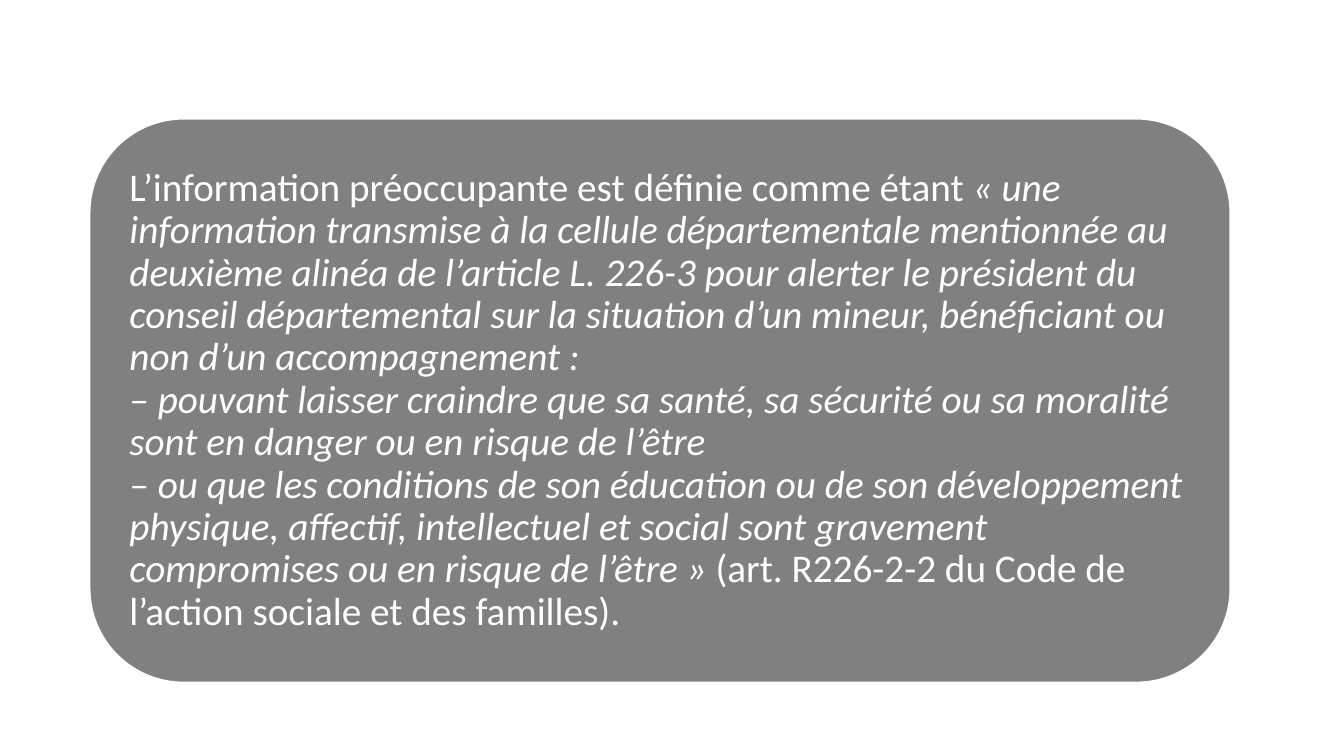
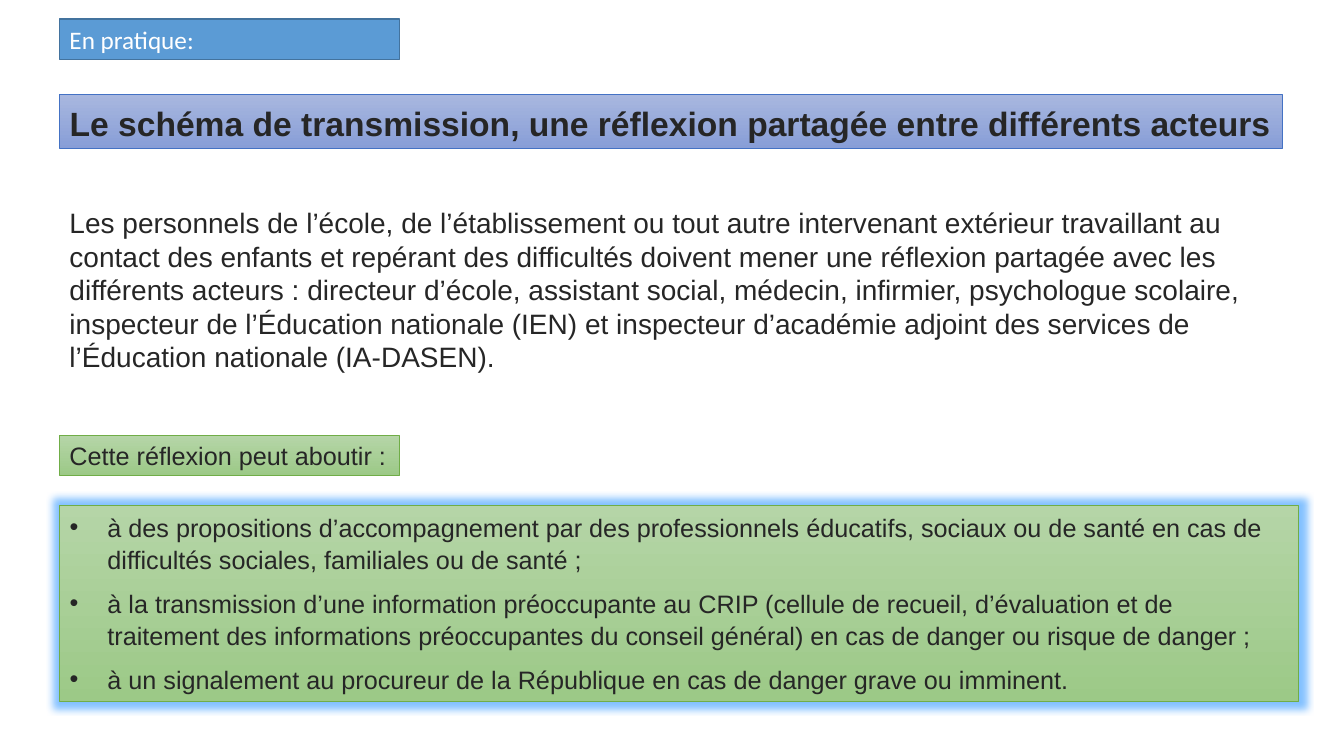
from dataclasses import dataclass
from typing import Optional

import lxml.etree
import pptx
import pptx.dml.color
import pptx.enum.shapes
import pptx.enum.text
import pptx.oxml.ns
import pptx.util

MSO_SHAPE = pptx.enum.shapes.MSO_SHAPE
ANCHOR = pptx.enum.text.MSO_ANCHOR
ALIGN = pptx.enum.text.PP_ALIGN


@dataclass(frozen=True)
class Theme:
    width: float = 13.33
    height: float = 7.5
    columns: int = 100
    rows: int = 100
    sans: str = "Arial"
    label: str = "Calibri"
    ink: str = "262626"
    white: str = "FFFFFF"
    grey: str = "808080"
    glow: str = "3399FF"
    quote_size: int = 28
    title_size: int = 24
    body_size: int = 20
    small_size: int = 18
    left: float = 4.43
    wide: float = 91
    narrow: float = 25.28


@dataclass(frozen=True)
class Skin:
    colors: tuple[str, ...]
    line: str
    weight: float = 0.5


@dataclass(frozen=True)
class Box:
    col: float
    row: float
    cols: float
    rows: float

    def place(self, sp) -> None:
        sp.left, sp.top, sp.width, sp.height = self.emu()

    def emu(self) -> tuple[int, ...]:
        x, y = T.width / T.columns, T.height / T.rows
        return tuple(pptx.util.Inches(v) for v in
                     (self.col * x, self.row * y, self.cols * x, self.rows * y))


T = Theme()
QUOTE_SKIN = Skin((T.grey,), T.white, 1)
LABEL_SKIN = Skin(("5B9BD5",), "43739E", 1)
TITLE_SKIN = Skin(("A8B7DF", "889ED7"), "4472C4")
GREEN_SKIN = Skin(("B5D5A7", "9CC987"), "70AD47")

QUOTE = (
    ("L’information préoccupante est définie comme étant ", False),
    ("« une information transmise à la cellule départementale mentionnée au "
     "deuxième alinéa de l’article L. 226-3 pour alerter le président du conseil "
     "départemental sur la situation d’un mineur, bénéficiant ou non d’un "
     "accompagnement :\n– pouvant laisser craindre que sa santé, sa sécurité ou sa "
     "moralité sont en danger ou en risque de l’être\n– ou que les conditions de son "
     "éducation ou de son développement physique, affectif, intellectuel et social "
     "sont gravement compromises ou en risque de l’être »", True),
    (" (art. R226-2-2 du Code de l’action sociale et des familles).", False),
)
TITLE = "Le schéma de transmission, une réflexion partagée entre différents acteurs"
INTRO = (
    "Les personnels de l’école, de l’établissement ou tout autre intervenant extérieur "
    "travaillant au contact des enfants et repérant des difficultés doivent mener une "
    "réflexion partagée avec les différents acteurs : directeur d’école, assistant "
    "social, médecin, infirmier, psychologue scolaire, inspecteur de l’Éducation "
    "nationale (IEN) et inspecteur d’académie adjoint des services de l’Éducation "
    "nationale (IA-DASEN)."
)
OUTCOMES = (
    "à des propositions d’accompagnement par des professionnels éducatifs, sociaux ou "
    "de santé en cas de difficultés sociales, familiales ou de santé ;",
    "à la transmission d’une information préoccupante au CRIP (cellule de recueil, "
    "d’évaluation et de traitement des informations préoccupantes du conseil général) "
    "en cas de danger ou risque de danger ;",
    "à un signalement au procureur de la République en cas de danger grave ou imminent.",
)


def rgb(value: str) -> pptx.dml.color.RGBColor:
    return pptx.dml.color.RGBColor.from_string(value)


def paint(sp, skin: Skin) -> None:
    if len(skin.colors) == 1:
        sp.fill.solid()
        sp.fill.fore_color.rgb = rgb(skin.colors[0])
    else:
        sp.fill.gradient()
        sp.fill.gradient_angle = 270
        for stop, color in zip(sp.fill.gradient_stops, skin.colors):
            stop.color.rgb = rgb(color)
    sp.line.color.rgb = rgb(skin.line)
    sp.line.width = pptx.util.Pt(skin.weight)
    sp.shadow.inherit = False


def add_glow(sp, color: str, radius: float, alpha: int) -> None:
    qn = pptx.oxml.ns.qn
    effects = sp.element.spPr.find(qn("a:effectLst"))
    glow = lxml.etree.SubElement(effects, qn("a:glow"), rad=str(pptx.util.Inches(radius)))
    clr = lxml.etree.SubElement(glow, qn("a:srgbClr"), val=color)
    lxml.etree.SubElement(clr, qn("a:alpha"), val=str(alpha * 1000))


def write(p, text: str, *, size: int, font: str = T.sans, color: str = T.ink,
          bold: bool = False, italic: bool = False, spacing: float = 1,
          after: float = 0) -> None:
    p.alignment = ALIGN.LEFT
    p.line_spacing = spacing
    p.space_before = pptx.util.Pt(0)
    p.space_after = pptx.util.Pt(after)
    for i, line in enumerate(text.split("\n")):
        if i:
            p.add_line_break()
        r = p.add_run()
        r.text = line
        r.font.size = pptx.util.Pt(size)
        r.font.name = font
        r.font.bold = bold
        r.font.italic = italic
        r.font.color.rgb = rgb(color)


def frame(sp, *, anchor=ANCHOR.TOP, wrap: bool = True, inset: Optional[float] = None):
    tf = sp.text_frame
    tf.auto_size = pptx.enum.text.MSO_AUTO_SIZE.NONE
    tf.word_wrap = wrap
    tf.vertical_anchor = anchor
    if inset is not None:
        tf.margin_left = tf.margin_right = pptx.util.Inches(inset)
        tf.margin_top = tf.margin_bottom = pptx.util.Inches(inset)
    return tf


def add_panel(s, box: Box, skin: Skin, shape=MSO_SHAPE.RECTANGLE):
    sp = s.shapes.add_shape(shape, *box.emu())
    paint(sp, skin)
    return sp


def build_definition(prs) -> None:
    s = prs.slides.add_slide(prs.slide_layouts[6])
    sp = add_panel(s, Box(6.68, 15.73, 84.85, 74.53), QUOTE_SKIN,
                   MSO_SHAPE.ROUNDED_RECTANGLE)
    p = frame(sp, anchor=ANCHOR.MIDDLE, inset=0.12).paragraphs[0]
    for text, italic in QUOTE:
        write(p, text, size=T.quote_size, font=T.label, color=T.white,
              italic=italic, spacing=0.9)


def build_practice(prs) -> None:
    s = prs.slides.add_slide(prs.slide_layouts[1])
    title, body = s.shapes.title, s.placeholders[1]

    Box(T.left, 12.53, T.wide, 7.07).place(title)
    paint(title, TITLE_SKIN)
    write(frame(title).paragraphs[0], TITLE, size=T.title_size, bold=True,
          spacing=1.07, after=8)

    intro = s.shapes.add_textbox(*Box(T.left, 26.53, T.wide, 27.87).emu())
    write(frame(intro).paragraphs[0], INTRO, size=T.body_size)

    lead = add_panel(s, Box(T.left, 57.6, T.narrow, 5.33), GREEN_SKIN)
    write(frame(lead, wrap=False).paragraphs[0], "Cette réflexion peut aboutir :",
          size=T.small_size)

    Box(T.left, 66.8, 92.2, 26).place(body)
    paint(body, GREEN_SKIN)
    add_glow(body, T.glow, 0.14, 60)
    tf = frame(body)
    for i, outcome in enumerate(OUTCOMES):
        p = tf.add_paragraph() if i else tf.paragraphs[0]
        write(p, outcome, size=T.small_size, spacing=1.07, after=8)

    label = add_panel(s, Box(T.left, 2.53, T.narrow, 5.33), LABEL_SKIN)
    write(frame(label).paragraphs[0], "En pratique:", size=T.small_size,
          font=T.label, color=T.white)


def main() -> None:
    prs = pptx.Presentation()
    prs.slide_width = pptx.util.Inches(T.width)
    prs.slide_height = pptx.util.Inches(T.height)
    build_definition(prs)
    build_practice(prs)
    prs.save("out.pptx")


if __name__ == "__main__":
    main()
